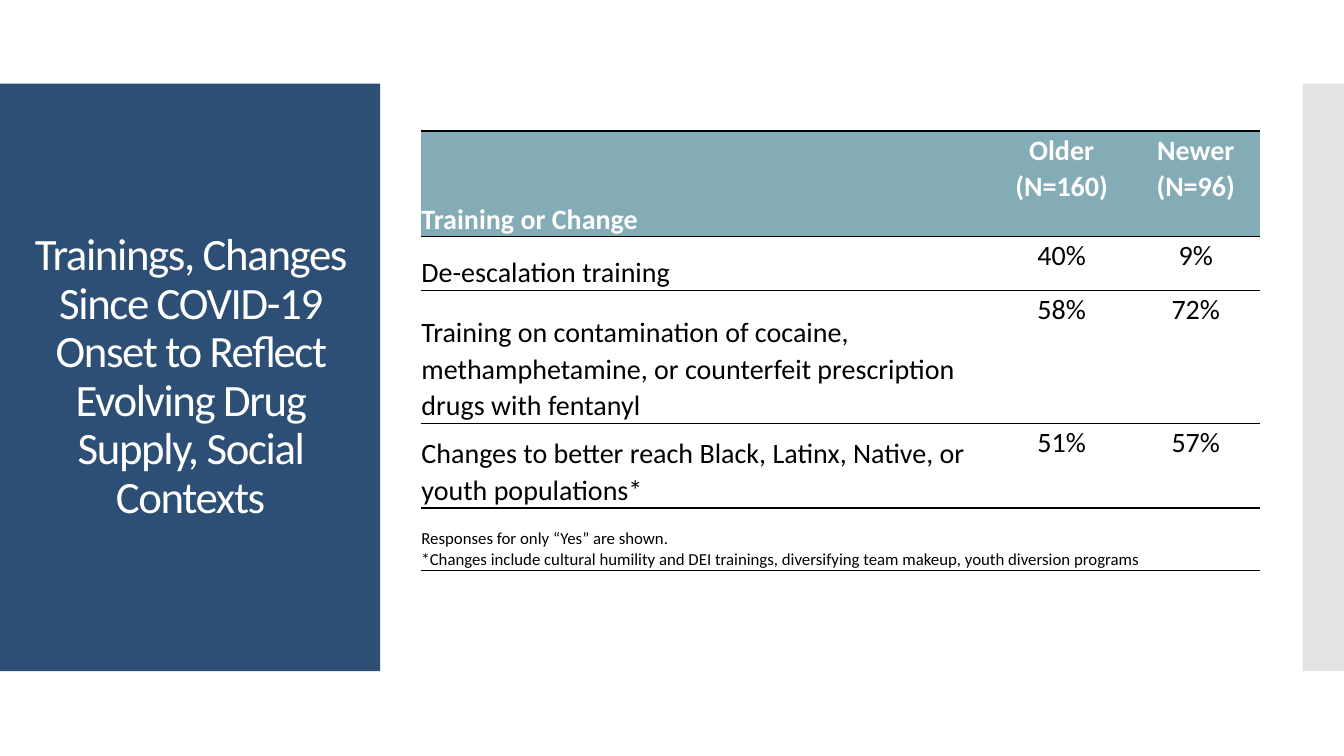
from lxml import etree
from pptx import Presentation
from pptx.dml.color import RGBColor
from pptx.enum.shapes import MSO_SHAPE
from pptx.enum.text import MSO_ANCHOR, PP_ALIGN
from pptx.oxml.ns import qn
from pptx.util import Inches, Pt

RECT = MSO_SHAPE.RECTANGLE
LEFT, CENTER = PP_ALIGN.LEFT, PP_ALIGN.CENTER
TOP, MIDDLE, BOTTOM = MSO_ANCHOR.TOP, MSO_ANCHOR.MIDDLE, MSO_ANCHOR.BOTTOM
NAVY, TEAL, GREY, WHITE, BLACK = "2D4E75", "84ACB6", "C8C8C8", "FFFFFF", "000000"

TITLE = ("Trainings, Changes Since COVID-19 Onset to Reflect "
         "Evolving Drug Supply, Social Contexts")
ROWS = [
    ("Training or Change", "Older\n(N=160)", "Newer\n(N=96)"),
    ("De-escalation training", "40%", "9%"),
    ("Training on contamination of cocaine, methamphetamine, or counterfeit "
     "prescription drugs with fentanyl", "58%", "72%"),
    ("Changes to better reach Black, Latinx, Native, or youth populations*",
     "51%", "57%"),
]
NOTE = ("Responses for only “Yes” are shown.\n"
        "*Changes include cultural humility and DEI trainings, "
        "diversifying team makeup, youth diversion programs")
WIDTHS = [5.66, 1.38, 1.28]
HEIGHTS = [1.05, 0.53, 1.32, 0.84, 0.62]


def rgb(code):
    return RGBColor.from_string(code)


def write(frame, text, size=20, color=BLACK, bold=False, align=LEFT,
          line=1.07, track=0):
    """Put each line of text in its own paragraph; track is in points."""
    frame.word_wrap = True
    for i, part in enumerate(text.split("\n")):
        para = frame.add_paragraph() if i else frame.paragraphs[0]
        para.alignment, para.line_spacing = align, line
        run = para.add_run()
        run.text = part
        font = run.font
        font.name, font.size, font.bold = "Calibri", Pt(size), bold
        font.color.rgb = rgb(color)
        if track:
            run._r.get_or_add_rPr().set("spc", str(track * 100))


def panel(slide, left, width, color, alpha=100):
    shape = slide.shapes.add_shape(
        RECT, Inches(left), Inches(0.83), Inches(width), Inches(5.83))
    shape.shadow.inherit = False
    shape.fill.solid()
    shape.fill.fore_color.rgb = rgb(color)
    shape.line.fill.background()
    if alpha < 100:
        tint = shape.fill._xPr.find(".//" + qn("a:srgbClr"))
        etree.SubElement(tint, qn("a:alpha"), val=str(alpha * 1000))


def rule(cell):
    """Draw lines above and below a cell, none at its sides."""
    props = cell._tc.get_or_add_tcPr()
    for side in "LRTB":
        edge = etree.SubElement(props, qn("a:ln" + side), w=str(Pt(1)))
        if side in "LR":
            etree.SubElement(edge, qn("a:noFill"))
        else:
            fill = etree.SubElement(edge, qn("a:solidFill"))
            etree.SubElement(fill, qn("a:srgbClr"), val=BLACK)


def add_grid(slide):
    grid = slide.shapes.add_table(
        len(HEIGHTS), len(WIDTHS), Inches(4.18), Inches(1.3),
        Inches(sum(WIDTHS)), Inches(sum(HEIGHTS))).table
    grid.horz_banding = grid.first_row = False
    for col, width in zip(grid.columns, WIDTHS):
        col.width = Inches(width)
    for row, height in zip(grid.rows, HEIGHTS):
        row.height = Inches(height)

    last = len(ROWS)
    grid.cell(last, 0).merge(grid.cell(last, len(WIDTHS) - 1))
    for r in range(len(HEIGHTS)):
        for c in range(len(WIDTHS)):
            cell = grid.cell(r, c)
            cell.margin_left = cell.margin_right = 0
            cell.margin_top = cell.margin_bottom = 0
            cell.vertical_anchor = TOP if c else BOTTOM
            rule(cell)
            if r:
                cell.fill.background()
            else:
                cell.fill.solid()
                cell.fill.fore_color.rgb = rgb(TEAL)
            if r < last:
                write(cell.text_frame, ROWS[r][c], bold=r == 0,
                      color=BLACK if r else WHITE, align=CENTER if c else LEFT)
    write(grid.cell(last, 0).text_frame, NOTE, size=12)


def main():
    deck = Presentation()
    deck.slide_width, deck.slide_height = Inches(13.33), Inches(7.5)
    slide = deck.slides.add_slide(deck.slide_layouts[6])
    panel(slide, 0, 3.77, NAVY)
    panel(slide, 12.92, 0.41, GREY, alpha=50)

    box = slide.shapes.add_textbox(
        Inches(0.28), Inches(1.23), Inches(3.22), Inches(5.03))
    frame = box.text_frame
    frame.margin_left = frame.margin_right = Inches(0.05)
    frame.vertical_anchor = MIDDLE
    write(frame, TITLE, size=32, color=WHITE, align=CENTER, line=0.9, track=-1)

    add_grid(slide)
    deck.save("out.pptx")


if __name__ == "__main__":
    main()
